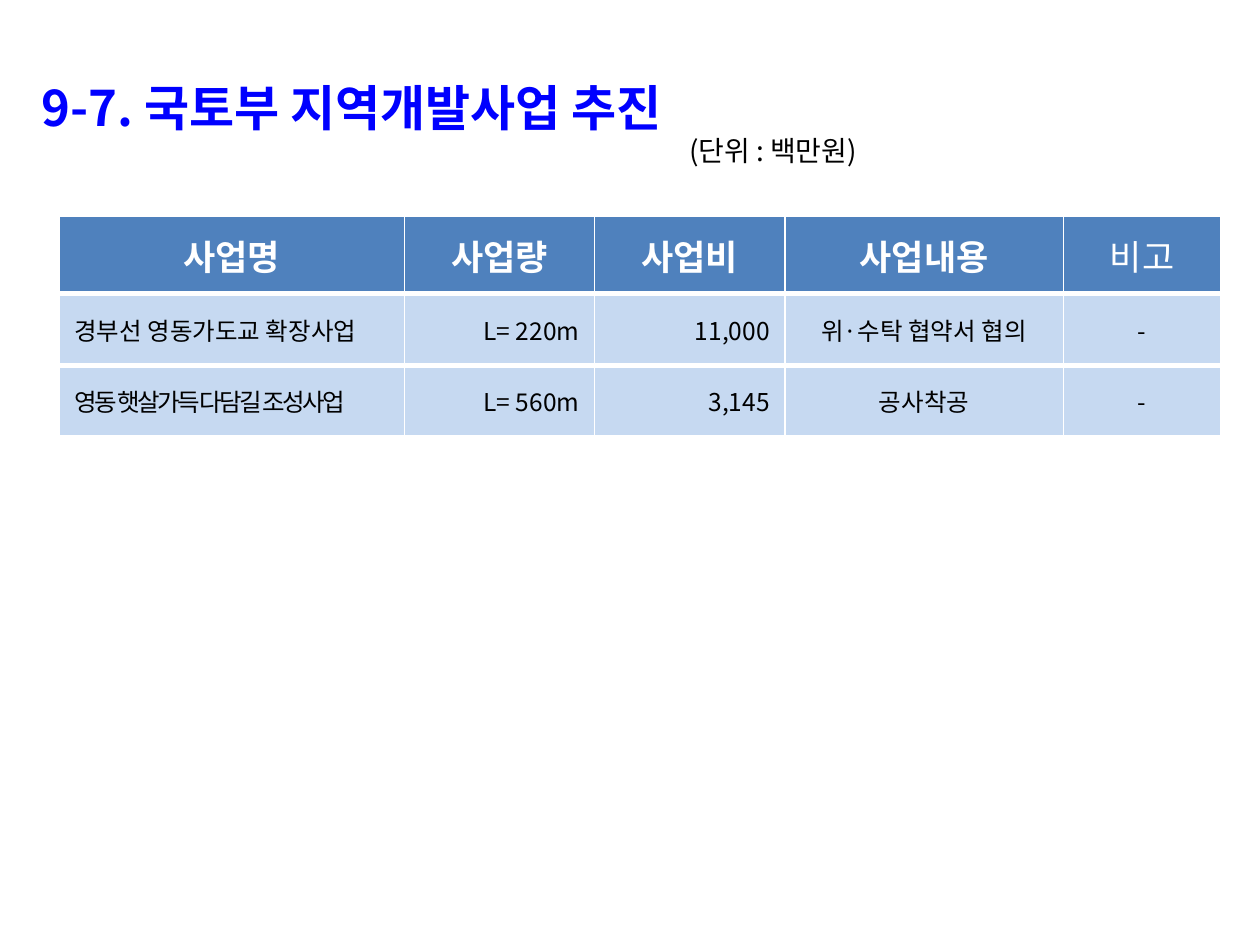
from pptx import Presentation
from pptx.dml.color import RGBColor
from pptx.enum.text import MSO_ANCHOR, PP_ALIGN
from pptx.oxml.ns import qn
from pptx.util import Inches, Pt
from lxml.etree import SubElement

FONT = "Noto Sans CJK KR"
BLUE = RGBColor(0x00, 0x00, 0xFF)
BLACK = RGBColor(0x00, 0x00, 0x00)
WHITE = RGBColor(0xFF, 0xFF, 0xFF)
HEAD = RGBColor(0x4F, 0x81, 0xBD)
BODY = RGBColor(0xC6, 0xD9, 0xF1)
WIDTHS = [2.74, 1.51, 1.51, 2.21, 1.25]
HEIGHTS = [0.61, 0.57, 0.57]
ALIGNS = [PP_ALIGN.LEFT, PP_ALIGN.RIGHT, PP_ALIGN.RIGHT, PP_ALIGN.CENTER, PP_ALIGN.CENTER]
ROWS = [
    ["사업명", "사업량", "사업비", "사업내용", "비고"],
    ["경부선 영동가도교 확장사업", "L= 220m", "11,000", "위·수탁 협약서 협의", "-"],
    ["영동 햇살가득 다담길 조성사업", "L= 560m", "3,145", "공사착공", "-"],
]


def write(para, text, size, color, bold=False, align=PP_ALIGN.LEFT):
    """Set a paragraph's text and its look."""
    para.text = text
    para.alignment = align
    for run in para.runs:
        font = run.font
        font.name, font.size, font.bold = FONT, Pt(size), bold
        font.color.rgb = color
        SubElement(run._r.get_or_add_rPr(), qn("a:ea"), typeface=FONT)


def add_title(slide):
    """Add the heading with the unit note indented below it."""
    box = slide.shapes.add_textbox(Inches(0.23), Inches(0.62), Inches(9.45), Inches(0.9))
    frame = box.text_frame
    frame.word_wrap = True
    head, unit = frame.paragraphs[0], frame.add_paragraph()
    write(head, "9-7. 국토부 지역개발사업 추진", 28, BLUE, bold=True)
    write(unit, "(단위 : 백만원)", 16, BLACK)
    unit._p.get_or_add_pPr().set("marL", str(Inches(5.14)))
    head.line_spacing = unit.line_spacing = 0.9


def edge(cell, top):
    """Draw white borders round a cell, thick above and below the body."""
    props = cell._tc.get_or_add_tcPr()
    for side, width in (("L", 1), ("R", 1), ("T", top), ("B", 3)):
        line = SubElement(props, qn(f"a:ln{side}"), w=str(Pt(width)))
        fill = SubElement(line, qn("a:solidFill"))
        SubElement(fill, qn("a:srgbClr"), val=str(WHITE))


def fill_cell(cell, text, row, col):
    """Fill one cell by its row and column."""
    first = row == 0
    edge(cell, 1 if first else 3)
    cell.fill.solid()
    cell.fill.fore_color.rgb = HEAD if first else BODY
    cell.vertical_anchor = MSO_ANCHOR.MIDDLE
    para = cell.text_frame.paragraphs[0]
    if first:
        write(para, text, 20, WHITE, col < len(WIDTHS) - 1, PP_ALIGN.CENTER)
    else:
        cell.margin_left = cell.margin_right = Inches(0.12)
        write(para, text, 14, BLACK, align=ALIGNS[col])


def add_grid(slide):
    """Add the project table."""
    frame = slide.shapes.add_table(
        len(ROWS), len(WIDTHS), Inches(0.47), Inches(1.72),
        Inches(sum(WIDTHS)), Inches(sum(HEIGHTS)))
    table = frame.table
    for column, width in zip(table.columns, WIDTHS):
        column.width = Inches(width)
    for row, height in enumerate(HEIGHTS):
        table.rows[row].height = Inches(height)
        for col, text in enumerate(ROWS[row]):
            fill_cell(table.cell(row, col), text, row, col)
    tight = table.cell(2, 0).text_frame.paragraphs[0].runs[0]
    tight._r.get_or_add_rPr().set("spc", "-150")


def main():
    """Build and save the slide."""
    deck = Presentation()
    deck.slide_width, deck.slide_height = Inches(10), Inches(7.5)
    slide = deck.slides.add_slide(deck.slide_layouts[6])
    add_title(slide)
    add_grid(slide)
    deck.save("out.pptx")


if __name__ == "__main__":
    main()
